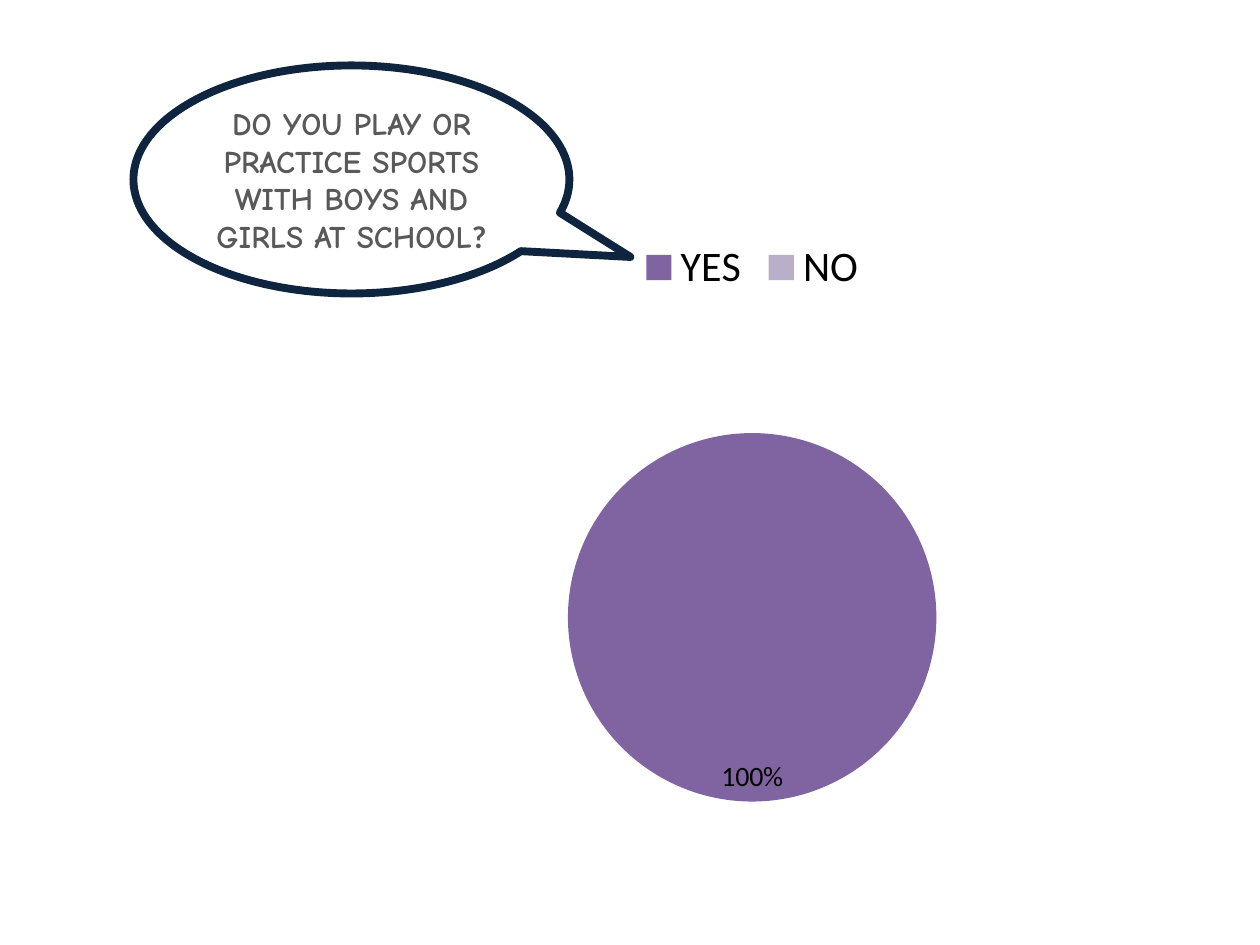
from dataclasses import dataclass

from pptx import Presentation
from pptx.chart.data import CategoryChartData
from pptx.dml.color import RGBColor as RGB
from pptx.enum.chart import XL_CHART_TYPE as ChartType
from pptx.enum.chart import XL_LABEL_POSITION as LabelPos
from pptx.enum.chart import XL_LEGEND_POSITION as LegendPos
from pptx.enum.shapes import MSO_SHAPE as Shape
from pptx.enum.text import MSO_ANCHOR as Anchor
from pptx.enum.text import PP_ALIGN as Align
from pptx.oxml import parse_xml
from pptx.oxml.ns import nsdecls, qn
from pptx.util import Pt


@dataclass(frozen=True)
class Theme:
    white: RGB = RGB(0xFF, 0xFF, 0xFF)
    black: RGB = RGB(0, 0, 0)
    navy: RGB = RGB(0x0F, 0x24, 0x3E)
    gray: RGB = RGB(0x59, 0x59, 0x59)
    slices: tuple = (RGB(0x4F, 0x81, 0xBD), RGB(0x80, 0x64, 0xA2),
                     RGB(0xB9, 0xAF, 0xC9))
    body_font: str = "Calibri"
    comic_font: str = "Comic Neue"
    question_size: int = 18
    legend_size: int = 24
    label_size: int = 16
    chart_size: int = 10


THEME = Theme()
QUESTION = "DO YOU PLAY OR PRACTICE SPORTS WITH BOYS AND GIRLS AT SCHOOL"
ANSWERS = ((QUESTION + "?", None), ("YES", 100), ("NO", 0))
EXPLOSION = 31


def style_font(font, size, color, name=THEME.body_font, bold=False):
    font.size, font.name, font.bold = Pt(size), name, bold
    font.color.rgb = color


def chart_xml(tag, content):
    return parse_xml(f"<c:{tag} {nsdecls('c')}>{content}</c:{tag}>")


def hidden_entry(tag, index):
    """Return a legend entry or data label that is switched off."""
    return chart_xml(tag, f'<c:idx val="{index}"/><c:delete val="1"/>')


def add_answer_pie(slide, box):
    data = CategoryChartData()
    data.categories = [name for name, _ in ANSWERS]
    data.add_series("Series 1", [value for _, value in ANSWERS])
    chart = slide.shapes.add_chart(ChartType.PIE, *map(Pt, box), data).chart
    chart.has_title = False
    style_font(chart.font, THEME.chart_size, THEME.black)

    chart.has_legend = True
    legend = chart.legend
    legend.position = LegendPos.TOP
    legend.include_in_layout = False
    style_font(legend.font, THEME.legend_size, THEME.black)
    legend._element.find(qn("c:legendPos")).addnext(
        hidden_entry("legendEntry", 0))

    plot = chart.plots[0]
    plot.vary_by_categories = True
    series = plot.series[0]
    series._element.find(qn("c:tx")).addnext(parse_xml(
        f'<c:explosion {nsdecls("c")} val="{EXPLOSION}"/>'))
    for i, color in enumerate(THEME.slices):
        fill = series.points[i].format.fill
        fill.solid()
        fill.fore_color.rgb = color

    labels = series.data_labels
    labels.show_value = False
    labels.show_percentage = True
    labels.position = LabelPos.INSIDE_END
    style_font(labels.font, THEME.label_size, THEME.black)
    labels._element.insert(0, hidden_entry("dLbl", 2))


def add_question_bubble(slide, box):
    sp = slide.shapes.add_shape(Shape.OVAL_CALLOUT, *map(Pt, box))
    sp.shadow.inherit = False
    sp.adjustments[0], sp.adjustments[1] = 0.64, 0.34
    sp.fill.solid()
    sp.fill.fore_color.rgb = THEME.white
    sp.line.color.rgb = THEME.navy
    sp.line.width = Pt(4.5)

    tf = sp.text_frame
    tf.word_wrap = True
    tf.vertical_anchor = Anchor.MIDDLE
    p = tf.paragraphs[0]
    p.alignment = Align.CENTER
    for text, font in ((QUESTION, THEME.comic_font), ("?", THEME.body_font)):
        r = p.add_run()
        r.text = text
        style_font(r.font, THEME.question_size, THEME.gray, font, bold=True)


def main():
    prs = Presentation()
    prs.slide_width, prs.slide_height = Pt(720), Pt(540)
    slide = prs.slides.add_slide(prs.slide_layouts[6])
    add_answer_pie(slide, (150.5, 128.2, 558.7, 339.8))
    add_question_bubble(slide, (76.3, 37.4, 249.1, 130.3))
    prs.save("out.pptx")


if __name__ == "__main__":
    main()
